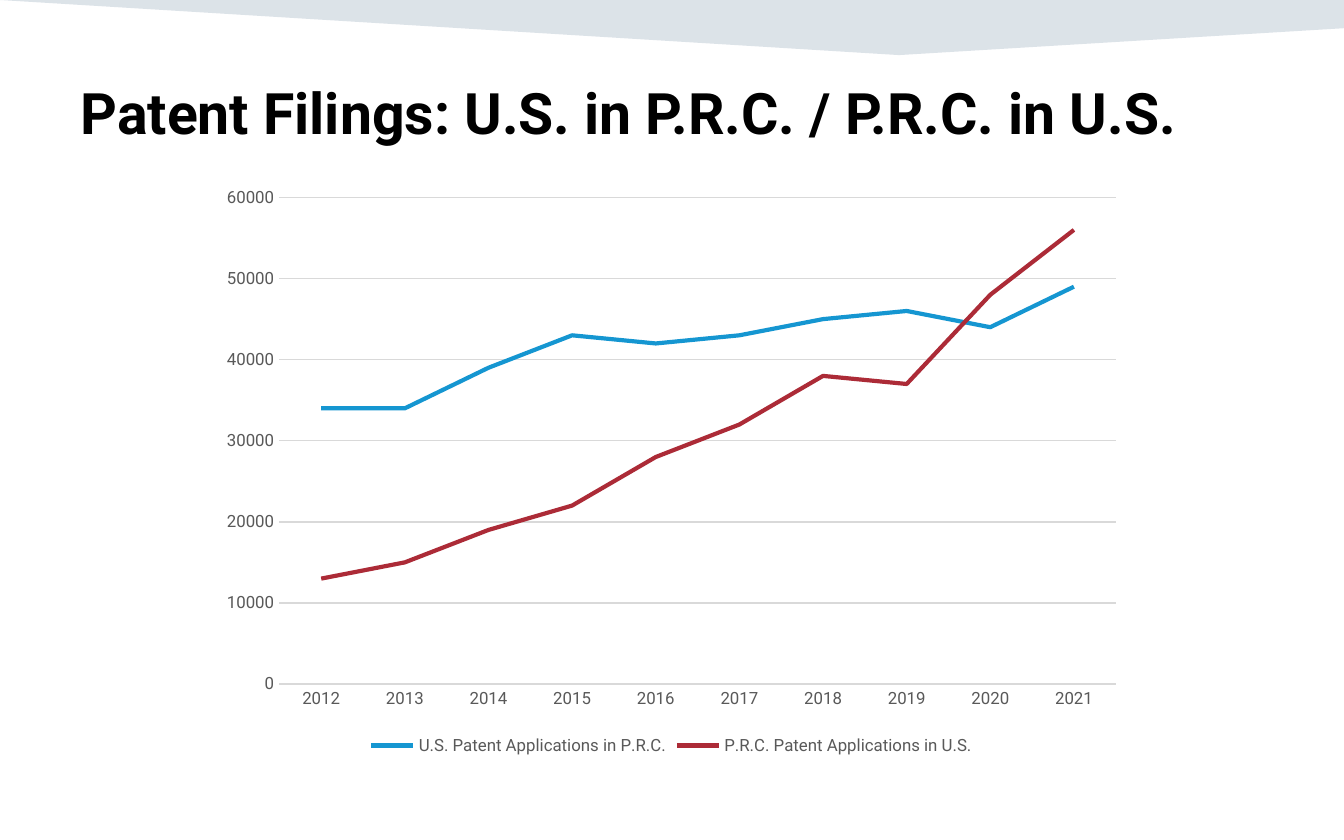
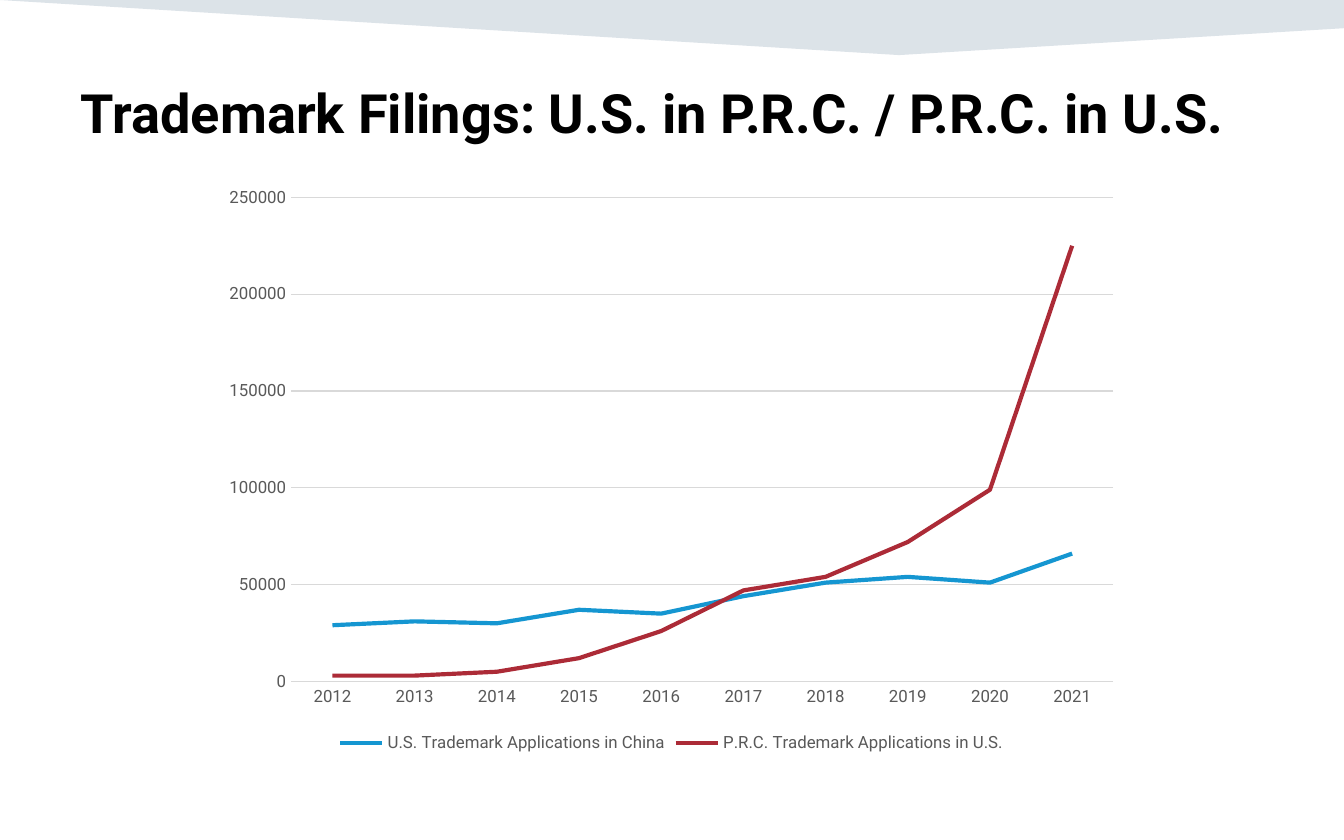
from dataclasses import dataclass

from lxml.etree import SubElement
from pptx import Presentation
from pptx.chart.data import CategoryChartData
from pptx.dml.color import RGBColor
from pptx.enum.chart import XL_CHART_TYPE, XL_LEGEND_POSITION, XL_TICK_MARK
from pptx.enum.text import MSO_ANCHOR, MSO_AUTO_SIZE, PP_ALIGN
from pptx.oxml.ns import qn
from pptx.util import Inches, Pt

YEARS = [str(year) for year in range(2012, 2022)]
SLIDES = [
    {
        "title": "Patent Filings: U.S. in P.R.C. / P.R.C. in U.S.",
        "size": 30.6,
        "box": (1.55, 1.31, 6.89, 4.35),
        "top": 60000,
        "step": 10000,
        "lines": {
            "U.S. Patent Applications in P.R.C.":
                [34000, 34000, 39000, 43000, 42000, 43000, 45000, 46000, 44000, 49000],
            "P.R.C. Patent Applications in U.S.":
                [13000, 15000, 19000, 22000, 28000, 32000, 38000, 37000, 48000, 56000],
        },
    },
    {
        "title": "Trademark Filings: U.S. in P.R.C. / P.R.C. in U.S.",
        "size": 29,
        "box": (1.57, 1.31, 6.85, 4.33),
        "top": 250000,
        "step": 50000,
        "lines": {
            "U.S. Trademark Applications in China":
                [29000, 31000, 30000, 37000, 35000, 44000, 51000, 54000, 51000, 66000],
            "P.R.C. Trademark Applications in U.S.":
                [3000, 3000, 5000, 12000, 26000, 47000, 54000, 72000, 99000, 225000],
        },
    },
]
BAND = [(0, 0), (10, 0), (10, 0.21), (6.69, 0.41)]
TITLE_BOX = (0.5, 0.34, 9, 1.04)


@dataclass(frozen=True)
class Theme:
    font: str = "Roboto"
    title: str = "000000"
    label: str = "595959"
    grid: str = "D9D9D9"
    band: str = "164469"
    band_alpha: int = 15
    lines: tuple = ("1596D1", "AC2B37")
    chart_size: float = 10
    label_size: float = 9
    grid_width: float = 0.75
    line_width: float = 2.25


THEME = Theme()


def style(font, size, color, bold=False):
    font.name = THEME.font
    font.size = Pt(size)
    font.bold = bold
    font.color.rgb = RGBColor.from_string(color)


def stroke(line, color, width):
    line.color.rgb = RGBColor.from_string(color)
    line.width = Pt(width)


def place(shape, box):
    shape.left, shape.top, shape.width, shape.height = map(Inches, box)


def write(shape, text, size, color, bold=False, align=PP_ALIGN.LEFT, spacing=0.9):
    frame = shape.text_frame
    frame.word_wrap = True
    frame.auto_size = MSO_AUTO_SIZE.NONE
    frame.vertical_anchor = MSO_ANCHOR.MIDDLE
    para = frame.paragraphs[0]
    para.alignment = align
    para.line_spacing = spacing
    run = para.add_run()
    run.text = text
    style(run.font, size, color, bold)


def add_band(slide):
    start, *rest = [(Inches(x), Inches(y)) for x, y in BAND]
    pen = slide.shapes.build_freeform(*start)
    pen.add_line_segments(rest, close=True)
    band = pen.convert_to_shape()
    band.shadow.inherit = False
    band.line.fill.background()
    band.fill.solid()
    band.fill.fore_color.rgb = RGBColor.from_string(THEME.band)
    tint = next(band.element.spPr.iter(qn("a:srgbClr")))
    SubElement(tint, qn("a:alpha"), val=str(THEME.band_alpha * 1000))


def add_lines(slide, item):
    data = CategoryChartData(number_format="General")
    data.categories = YEARS
    for name, values in item["lines"].items():
        data.add_series(name, values)
    chart = slide.shapes.add_chart(
        XL_CHART_TYPE.LINE, *map(Inches, item["box"]), data).chart
    style(chart.font, THEME.chart_size, THEME.title)
    chart.has_title = False
    chart.has_legend = True
    chart.legend.position = XL_LEGEND_POSITION.BOTTOM
    chart.legend.include_in_layout = False
    style(chart.legend.font, THEME.label_size, THEME.label)

    years, counts = chart.category_axis, chart.value_axis
    for axis in (years, counts):
        axis.major_tick_mark = axis.minor_tick_mark = XL_TICK_MARK.NONE
        style(axis.tick_labels.font, THEME.label_size, THEME.label)
    stroke(years.format.line, THEME.grid, THEME.grid_width)
    counts.format.line.fill.background()
    counts.has_major_gridlines = True
    stroke(counts.major_gridlines.format.line, THEME.grid, THEME.grid_width)
    counts.minimum_scale, counts.maximum_scale = 0, item["top"]
    counts.major_unit = item["step"]

    plot = chart.plots[0]
    plot.vary_by_categories = False
    for line, color in zip(plot.series, THEME.lines):
        line.smooth = False
        stroke(line.format.line, color, THEME.line_width)


def main():
    deck = Presentation()
    deck.slide_width, deck.slide_height = Inches(10), Inches(6.25)
    for item in SLIDES:
        slide = deck.slides.add_slide(deck.slide_layouts.get_by_name("Title Only"))
        add_band(slide)
        title = slide.shapes.title
        place(title, TITLE_BOX)
        write(title, item["title"], item["size"], THEME.title, bold=True)
        add_lines(slide, item)
    deck.save("out.pptx")


if __name__ == "__main__":
    main()
